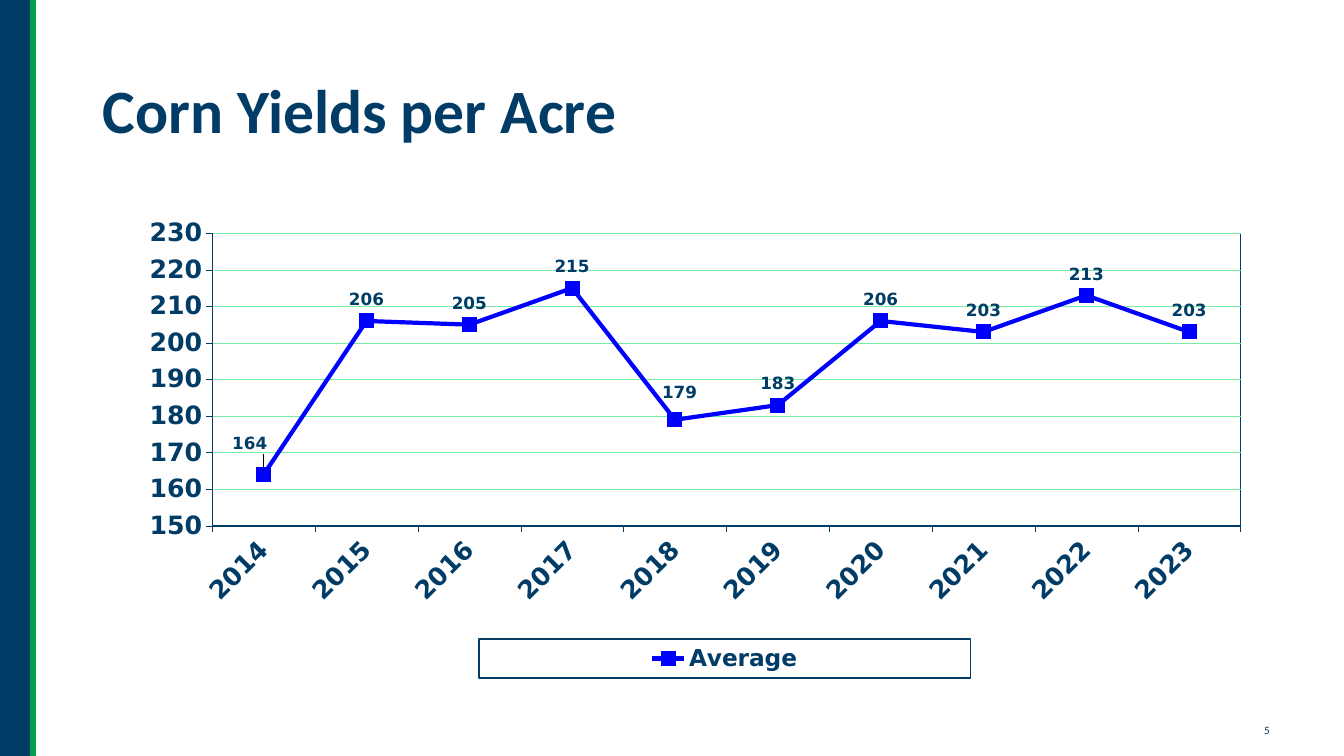
from lxml import etree
from pptx import Presentation
from pptx.chart.data import CategoryChartData
from pptx.dml.color import RGBColor
from pptx.enum.chart import (XL_CHART_TYPE, XL_LABEL_POSITION, XL_LEGEND_POSITION,
                             XL_MARKER_STYLE, XL_TICK_MARK)
from pptx.enum.shapes import MSO_CONNECTOR, MSO_SHAPE
from pptx.enum.text import MSO_ANCHOR
from pptx.oxml import parse_xml
from pptx.oxml.ns import nsdecls, qn
from pptx.util import Inches, Pt

TITLE = "Corn Yields per Acre"
PAGE_NUMBER = "5"
SERIES_NAME = "Average"
YIELDS = {
    "2014": 164, "2015": 206, "2016": 205, "2017": 215, "2018": 179,
    "2019": 183, "2020": 206, "2021": 203, "2022": 213, "2023": 203,
}
LABEL_SHIFTS = {0: (-0.012, -0.02), 4: (0.004, -0.013)}  # fractions of the chart

NAVY, GREEN, BLUE, MINT = "003C66", "009F4D", "0000FF", "76EDA4"
TEXT_FONT, CHART_FONT = "Calibri", "DejaVu Sans"
ABOVE = XL_LABEL_POSITION.ABOVE
OUTSIDE = XL_TICK_MARK.OUTSIDE
SQUARE = XL_MARKER_STYLE.SQUARE


def color(hex_code):
    return RGBColor.from_string(hex_code)


def set_font(font, size, name=CHART_FONT, bold=True):
    font.size, font.name, font.bold = Pt(size), name, bold
    font.color.rgb = color(NAVY)


def set_line(line, hex_code, width):
    line.color.rgb = color(hex_code)
    line.width = Pt(width)


def add_text(page, text, left, top, width, height, size, bold=False,
             anchor=MSO_ANCHOR.TOP, wrap=True, spacing=None):
    box = page.shapes.add_textbox(*map(Inches, (left, top, width, height)))
    frame = box.text_frame
    frame.word_wrap, frame.vertical_anchor = wrap, anchor
    para = frame.paragraphs[0]
    para.line_spacing = spacing
    span = para.add_run()
    span.text = text
    set_font(span.font, size, TEXT_FONT, bold)


def manual_layout(**values):
    """Return a c:layout element holding the given settings in order."""
    items = "".join(f'<c:{key} val="{value}"/>' for key, value in values.items())
    return parse_xml(f'<c:layout {nsdecls("c")}><c:manualLayout>{items}'
                     '</c:manualLayout></c:layout>')


def add_side_band(page):
    band = page.shapes.add_shape(MSO_SHAPE.RECTANGLE, 0, 0, Inches(0.33), Inches(7.5))
    band.shadow.inherit = False
    band.fill.solid()
    band.fill.fore_color.rgb = color(NAVY)
    band.line.fill.background()
    edge = page.shapes.add_connector(MSO_CONNECTOR.STRAIGHT, Inches(0.33), 0,
                                     Inches(0.33), Inches(7.5))
    set_line(edge.line, GREEN, 4.5)
    etree.SubElement(edge._element.spPr, qn("a:effectLst"))


def outline(parent, before):
    """Add a thin navy border to a chart part, ahead of the named child if any."""
    border = parse_xml(
        f'<c:spPr {nsdecls("c", "a")}><a:noFill/><a:ln w="12700"><a:solidFill>'
        f'<a:srgbClr val="{NAVY}"/></a:solidFill></a:ln></c:spPr>')
    follower = parent.find(qn(before))
    if follower is None:
        parent.append(border)
    else:
        follower.addprevious(border)


def style_axes(chart):
    for axis in (chart.category_axis, chart.value_axis):
        axis.major_tick_mark = OUTSIDE
        axis.minor_tick_mark = XL_TICK_MARK.NONE
        set_font(axis.tick_labels.font, 18)
        set_line(axis.format.line, NAVY, 0.25)
    chart.category_axis._element.txPr.find(qn("a:bodyPr")).set("rot", "-2700000")
    scale = chart.value_axis
    scale.minimum_scale, scale.maximum_scale, scale.major_unit = 150, 230, 10
    scale.has_major_gridlines = True
    set_line(scale.major_gridlines.format.line, MINT, 0.25)


def style_series(series):
    series.smooth = False
    set_line(series.format.line, BLUE, 3)
    marker = series.marker
    marker.style, marker.size = SQUARE, 10
    marker.format.fill.solid()
    marker.format.fill.fore_color.rgb = color(BLUE)
    set_line(marker.format.line, BLUE, 0.75)
    labels = series.data_labels
    labels.show_value, labels.position = True, ABOVE
    set_font(labels.font, 12)
    for index, (right, down) in LABEL_SHIFTS.items():
        label = series.points[index].data_label
        set_font(label.font, 12)
        label.position = ABOVE
        element = labels._element.find(f'{qn("c:dLbl")}[{index and 2 or 1}]')
        element.insert(1, manual_layout(x=right, y=down))


def add_yield_chart(page):
    data = CategoryChartData()
    data.categories = list(YIELDS)
    data.add_series(SERIES_NAME, list(YIELDS.values()))
    chart = page.shapes.add_chart(XL_CHART_TYPE.LINE_MARKERS, Inches(0.92), Inches(2),
                                  Inches(11.5), Inches(4.76), data).chart
    chart.has_title = False
    set_font(chart.font, 18)
    chart.plots[0].vary_by_categories = False
    style_axes(chart)
    style_series(chart.plots[0].series[0])

    plot_area = chart._chartSpace.chart.plotArea
    for old in plot_area.findall(qn("c:layout")):
        plot_area.remove(old)
    plot_area.insert(0, manual_layout(layoutTarget="inner", xMode="edge", yMode="edge",
                                      x=0.103, y=0.066, w=0.887, h=0.61))
    outline(plot_area, "c:extLst")

    chart.has_legend = True
    legend = chart.legend
    legend.position, legend.include_in_layout = XL_LEGEND_POSITION.BOTTOM, False
    set_font(legend.font, 16.6)
    for old in legend._element.findall(qn("c:layout")):
        legend._element.remove(old)
    legend._element.find(qn("c:legendPos")).addnext(
        manual_layout(xMode="edge", yMode="edge", x=0.333, y=0.912, w=0.424, h=0.081))
    outline(legend._element, "c:txPr")


def main():
    deck = Presentation()
    deck.slide_width, deck.slide_height = Inches(13.33), Inches(7.5)
    page = deck.slides.add_slide(deck.slide_layouts[6])
    add_text(page, PAGE_NUMBER, 12.44, 7.13, 0.34, 0.24, 8, wrap=False)
    add_side_band(page)
    add_text(page, TITLE, 0.92, 0.4, 11.5, 1.45, 44, bold=True,
             anchor=MSO_ANCHOR.MIDDLE, spacing=0.9)
    add_yield_chart(page)
    deck.save("out.pptx")


if __name__ == "__main__":
    main()
